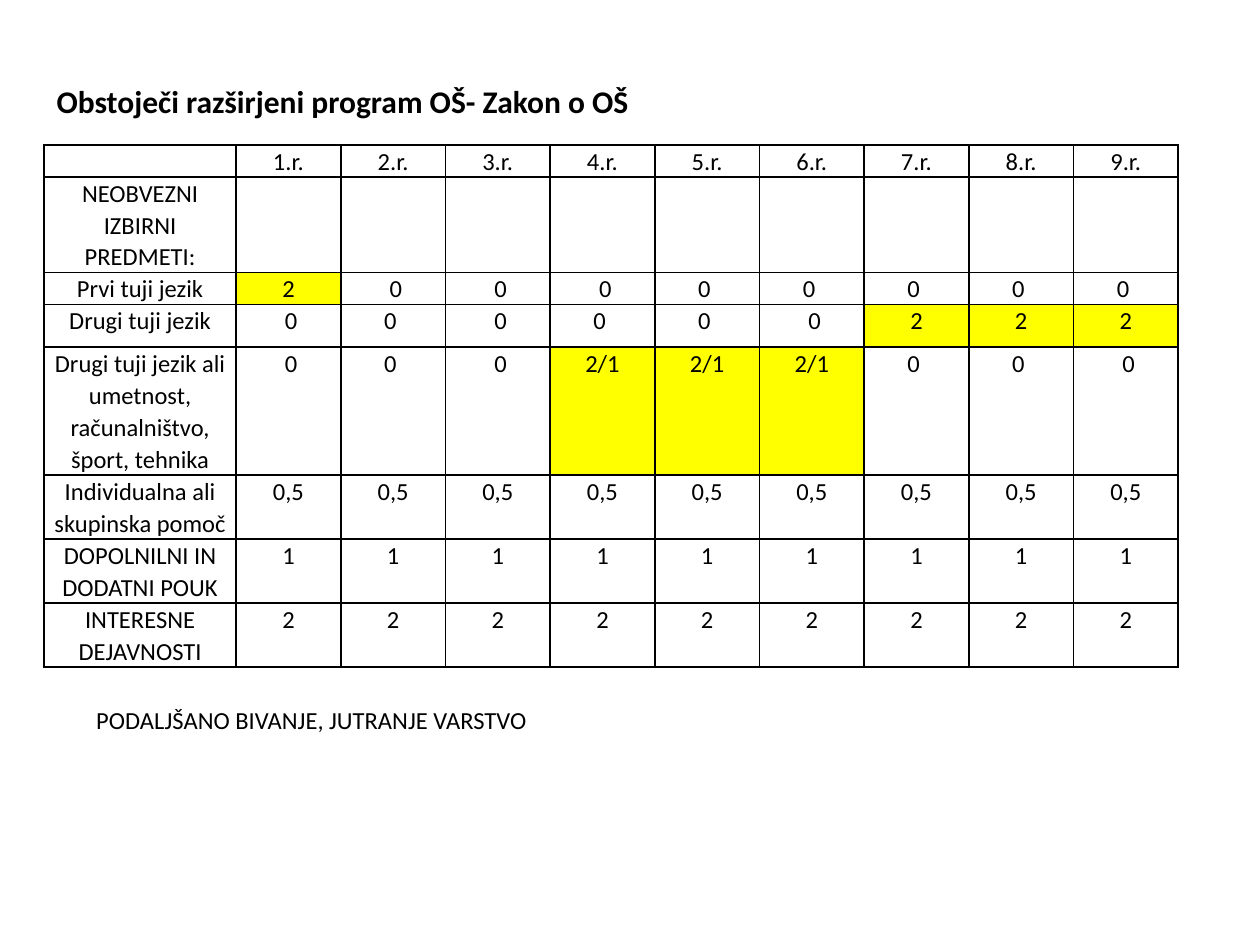
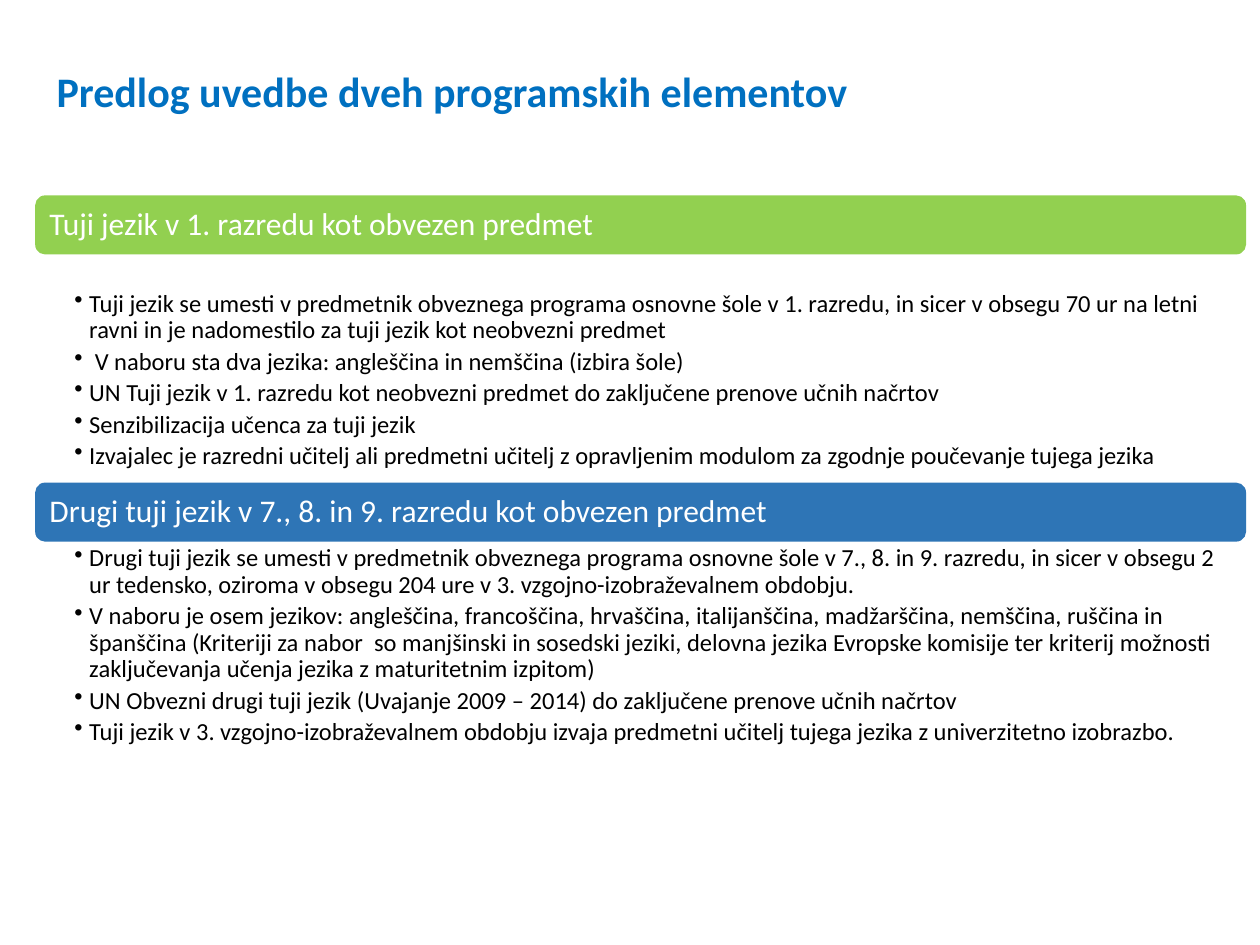
from lxml import etree
from pptx import Presentation
from pptx import util as u
from pptx.dml import color
from pptx.enum import shapes, text
from pptx.oxml import ns

COLOURS = {
    "ink": "000000",
    "paper": "FFFFFF",
    "mark": "FFFF00",
    "title": "0070C0",
    "green": "92D050",
    "blue": "2E75B6",
}
FONT = "Calibri"
BODY_SIZE = 14
HEADING_SIZE = 18
LEFT = 0.89

PROGRAM_TITLE = "Obstoječi razširjeni program OŠ- Zakon o OŠ"
PROGRAM_NOTE = "PODALJŠANO BIVANJE, JUTRANJE VARSTVO"
GRADES = [f"{grade}.r." for grade in range(1, 10)]
PROGRAM = [
    ("", 0.64, GRADES),
    ("NEOBVEZNI IZBIRNI PREDMETI:", 1.93, [""] * 9),
    ("Prvi tuji jezik", 0.64, ["2"] + [" 0"] * 3 + ["0 "] * 5),
    ("Drugi tuji jezik", 0.86, [" 0", "0 ", " 0", "0 ", "0 ", " 0"] + ["2"] * 3),
    ("Drugi tuji jezik ali umetnost, računalništvo, šport, tehnika", 2.58,
     [" 0", "0 ", " 0"] + ["2/1"] * 3 + ["0 ", "0 ", " 0"]),
    ("Individualna ali skupinska pomoč", 1.29, ["0,5"] * 9),
    ("DOPOLNILNI IN DODATNI POUK", 1.29, ["1"] * 9),
    ("INTERESNE DEJAVNOSTI", 1.29, ["2"] * 9),
]
MARKED = {(2, 1), (3, 7), (3, 8), (3, 9), (4, 4), (4, 5), (4, 6)}
LABEL_WIDTH, GRADE_WIDTH = 3.87, 2.11

PROPOSAL_TITLE = "Predlog uvedbe dveh programskih elementov"
PROPOSALS = [
    {
        "heading": "Tuji jezik v 1. razredu kot obvezen predmet",
        "colour": "green",
        "top": 3.94,
        "list_top": 5.79,
        "list_height": 3.94,
        "points": [
            "Tuji jezik se umesti v predmetnik obveznega programa osnovne šole v 1. razredu, in sicer "
            "v obsegu 70 ur na letni ravni in je nadomestilo za tuji jezik kot neobvezni predmet",
            " V naboru sta dva jezika: angleščina in nemščina (izbira šole)",
            "UN Tuji jezik v 1. razredu kot neobvezni predmet do zaključene prenove učnih načrtov",
            "Senzibilizacija učenca za tuji jezik",
            "Izvajalec je razredni učitelj ali predmetni učitelj z opravljenim modulom za zgodnje "
            "poučevanje tujega jezika",
        ],
    },
    {
        "heading": "Drugi tuji jezik v 7., 8. in 9. razredu kot obvezen predmet",
        "colour": "blue",
        "top": 9.73,
        "list_top": 10.92,
        "list_height": 4.34,
        "points": [
            "Drugi tuji jezik se umesti v predmetnik obveznega programa osnovne šole v 7., 8. in 9. "
            "razredu, in sicer v obsegu 2 ur tedensko, oziroma v obsegu 204 ure v 3. "
            "vzgojno-izobraževalnem obdobju.",
            "V naboru je osem jezikov: angleščina, francoščina, hrvaščina, italijanščina, madžarščina, "
            "nemščina, ruščina in španščina (Kriteriji za nabor  so manjšinski in sosedski jeziki, "
            "delovna jezika Evropske komisije ter kriterij možnosti zaključevanja učenja jezika z "
            "maturitetnim izpitom)",
            "UN Obvezni drugi tuji jezik (Uvajanje 2009 – 2014) do zaključene prenove učnih načrtov",
            "Tuji jezik v 3. vzgojno-izobraževalnem obdobju izvaja predmetni učitelj tujega jezika z "
            "univerzitetno izobrazbo.",
        ],
    },
]
BAND_LEFT, BAND_WIDTH, BAND_HEIGHT = 0.71, 24.41, 1.19


def rgb(name):
    return color.RGBColor.from_string(COLOURS[name])


def write(para, words, size=BODY_SIZE, colour="ink", bold=False, spacing=None):
    if spacing:
        para.line_spacing = spacing
    span = para.add_run()
    span.text = words
    span.font.name = FONT
    span.font.size = u.Pt(size)
    span.font.bold = bold
    span.font.color.rgb = rgb(colour)


def set_margins(target, left, top, right, bottom):
    target.margin_left, target.margin_top = u.Cm(left), u.Cm(top)
    target.margin_right, target.margin_bottom = u.Cm(right), u.Cm(bottom)


def add_text_box(page, left, top, width, height, wrap=True):
    box = page.shapes.add_textbox(u.Cm(left), u.Cm(top), u.Cm(width), u.Cm(height))
    box.text_frame.word_wrap = wrap
    return box.text_frame


def add_borders(cell):
    props = cell._tc.get_or_add_tcPr()
    for position, side in enumerate(("lnL", "lnR", "lnT", "lnB")):
        line = etree.Element(ns.qn(f"a:{side}"), w=str(u.Pt(1)))
        fill = etree.SubElement(line, ns.qn("a:solidFill"))
        etree.SubElement(fill, ns.qn("a:srgbClr"), val=COLOURS["ink"])
        props.insert(position, line)


def fill_cell(cell, words, marked):
    set_margins(cell, 0.18, 0, 0.18, 0)
    cell.fill.solid()
    cell.fill.fore_color.rgb = rgb("mark" if marked else "paper")
    add_borders(cell)
    para = cell.text_frame.paragraphs[0]
    para.alignment = text.PP_ALIGN.CENTER
    if words:
        write(para, words, spacing=1.07)
    else:
        etree.SubElement(para._p, ns.qn("a:endParaRPr"), sz=str(BODY_SIZE * 100))


def add_program_table(page):
    width = LABEL_WIDTH + GRADE_WIDTH * len(GRADES)
    height = sum(row_height for _, row_height, _ in PROGRAM)
    table = page.shapes.add_table(len(PROGRAM), len(GRADES) + 1, u.Cm(LEFT), u.Cm(2.92),
                                  u.Cm(width), u.Cm(height)).table
    table.first_row = table.horz_banding = False
    for index, column in enumerate(table.columns):
        column.width = u.Cm(GRADE_WIDTH if index else LABEL_WIDTH)
    for row, (label, row_height, hours) in enumerate(PROGRAM):
        table.rows[row].height = u.Cm(row_height)
        for col, words in enumerate([label, *hours]):
            fill_cell(table.cell(row, col), words, (row, col) in MARKED)


def add_band(page, proposal):
    band = page.shapes.add_shape(shapes.MSO_SHAPE.ROUNDED_RECTANGLE, u.Cm(BAND_LEFT),
                                 u.Cm(proposal["top"]), u.Cm(BAND_WIDTH), u.Cm(BAND_HEIGHT))
    band.shadow.inherit = False
    band.fill.solid()
    band.fill.fore_color.rgb = rgb(proposal["colour"])
    band.line.fill.background()
    frame = band.text_frame
    set_margins(frame, 0.23, 0.18, 0.23, 0.18)
    frame.vertical_anchor = text.MSO_ANCHOR.MIDDLE
    para = frame.paragraphs[0]
    para.alignment = text.PP_ALIGN.LEFT
    write(para, proposal["heading"], HEADING_SIZE, "paper", spacing=0.9)


def add_points(page, proposal):
    frame = add_text_box(page, BAND_LEFT, proposal["list_top"], BAND_WIDTH, proposal["list_height"])
    set_margins(frame, 0.79, 0.08, 0.36, 0.08)
    for index, point in enumerate(proposal["points"]):
        para = frame.add_paragraph() if index else frame.paragraphs[0]
        props = para._p.get_or_add_pPr()
        props.set("marL", str(u.Cm(0.3)))
        props.set("indent", str(-u.Cm(0.3)))
        etree.SubElement(props, ns.qn("a:buChar"), char="•")
        para.space_after = u.Pt(2.8)
        write(para, point, spacing=0.9)


def build_program(page):
    add_program_table(page)
    note = add_text_box(page, LEFT, 14.07, 10.03, 0.86, wrap=False)
    note.margin_left = u.Cm(1.05)
    note.vertical_anchor = text.MSO_ANCHOR.MIDDLE
    write(note.paragraphs[0], PROGRAM_NOTE)
    title = add_text_box(page, LEFT, 1.52, 12.14, 1.02, wrap=False)
    write(title.paragraphs[0], PROGRAM_TITLE, HEADING_SIZE, bold=True)


def build_proposals(page):
    for proposal in PROPOSALS:
        add_band(page, proposal)
        add_points(page, proposal)
    title = add_text_box(page, LEFT, 1.12, 21.89, 1.55)
    title.vertical_anchor = text.MSO_ANCHOR.MIDDLE
    write(title.paragraphs[0], PROPOSAL_TITLE, 24, "title", bold=True, spacing=0.9)


def main():
    deck = Presentation()
    deck.slide_width, deck.slide_height = u.Cm(25.4), u.Cm(19.05)
    for build in (build_program, build_proposals):
        build(deck.slides.add_slide(deck.slide_layouts[6]))
    deck.save("out.pptx")


if __name__ == "__main__":
    main()
